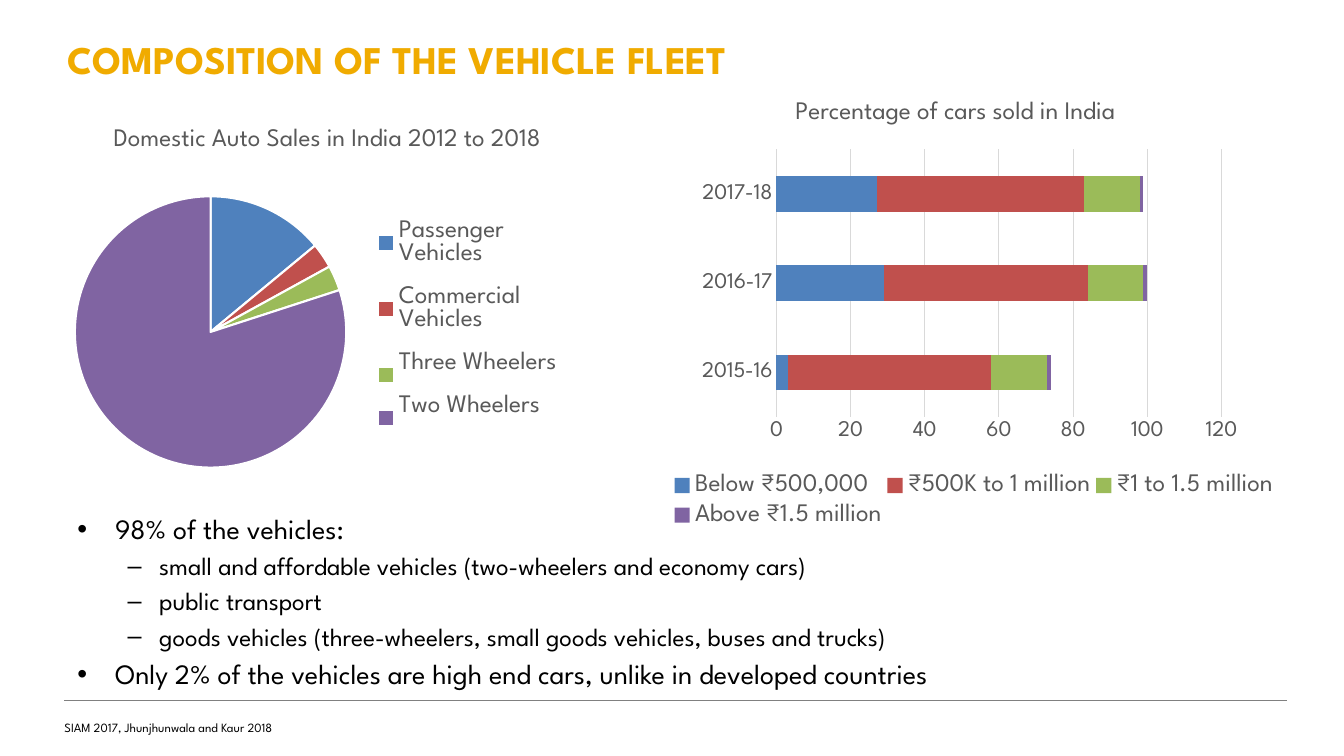
from dataclasses import dataclass

from lxml import etree
from pptx import Presentation
from pptx.chart.data import CategoryChartData
from pptx.dml.color import RGBColor
from pptx.enum.chart import XL_CHART_TYPE, XL_LEGEND_POSITION, XL_TICK_MARK
from pptx.enum.shapes import MSO_CONNECTOR
from pptx.enum.text import MSO_ANCHOR, MSO_AUTO_SIZE, PP_ALIGN
from pptx.oxml.ns import qn
from pptx.util import Pt

PIE, STACKED_BARS = XL_CHART_TYPE.PIE, XL_CHART_TYPE.BAR_STACKED
LEGEND_RIGHT, LEGEND_BOTTOM = XL_LEGEND_POSITION.RIGHT, XL_LEGEND_POSITION.BOTTOM
NO_TICKS = XL_TICK_MARK.NONE
TOP, MIDDLE = MSO_ANCHOR.TOP, MSO_ANCHOR.MIDDLE


@dataclass(frozen=True)
class Theme:
    font: str = "League Spartan"
    accent: RGBColor = RGBColor(0xF0, 0xAB, 0x00)
    text: RGBColor = RGBColor(0, 0, 0)
    chart_text: RGBColor = RGBColor(0x59, 0x59, 0x59)
    grid: RGBColor = RGBColor(0xD9, 0xD9, 0xD9)
    rule: RGBColor = RGBColor(0x80, 0x80, 0x80)
    white: RGBColor = RGBColor(0xFF, 0xFF, 0xFF)
    series: tuple = tuple(map(RGBColor.from_string, ("4F81BD", "C0504D", "9BBB59", "8064A2")))
    title_size: int = 28
    bullet_sizes: tuple = (20, 18)
    chart_size: int = 18
    axis_size: int = 16
    source_size: int = 9


THEME = Theme()

TITLE = "COMPOSITION OF THE VEHICLE FLEET"
SOURCE = "SIAM 2017, Jhunjhunwala and Kaur 2018"
BULLETS = [
    (0, "98% of the vehicles:"),
    (1, "small and affordable vehicles (two-wheelers and economy cars)"),
    (1, "public transport"),
    (1, "goods vehicles (three-wheelers, small goods vehicles, buses and trucks)"),
    (0, "Only 2% of the vehicles are high end cars, unlike in developed countries"),
]

# Boxes are left, top, width, height in points; layouts are fractions of the chart.
SALES = {
    "type": PIE,
    "title": "Domestic Auto Sales in India 2012 to 2018",
    "categories": ["Passenger Vehicles", "Commercial Vehicles", "Three Wheelers", "Two Wheelers"],
    "series": [("Series 1", (14, 3, 3, 80))],
    "box": (10, 75.6, 453, 269.3),
    "legend": LEGEND_RIGHT,
    "title_layout": (0.15, 0.04),
    "plot_layout": (0.09, 0.24, 0.44, 0.72),
    "legend_layout": (0.57, 0.25, 0.29, 0.63),
}
PRICES = {
    "type": STACKED_BARS,
    "title": "Percentage of cars sold in India",
    "categories": ["2015-16", "2016-17", "2017-18"],
    "series": [
        ("Below ₹500,000", (3, 29, 27)),
        ("₹500K to 1 million", (55, 55, 56)),
        ("₹1 to 1.5 million", (15, 15, 15)),
        ("Above ₹1.5 million", (1, 1, 1)),
    ],
    "box": (447, 52.6, 512.6, 360.7),
    "legend": LEGEND_BOTTOM,
    "title_layout": (0.23, 0.04),
    "plot_layout": (0.21, 0.15, 0.62, 0.53),
    "legend_layout": (0.06, 0.78, 0.85, 0.13),
}


def place(shape, box):
    shape.left, shape.top, shape.width, shape.height = map(Pt, box)


def style_font(font, size, color, bold=False):
    font.name, font.size, font.bold = THEME.font, Pt(size), bold
    font.color.rgb = color


def prepare_frame(placeholder, box, anchor, left_inset=0):
    place(placeholder, box)
    frame = placeholder.text_frame
    frame.word_wrap, frame.auto_size = True, MSO_AUTO_SIZE.NONE
    frame.vertical_anchor, frame.margin_left = anchor, Pt(left_inset)
    return frame


def set_layout(parent, index, fractions, inner=False):
    """Fix a chart part at x, y and, if given, width, height."""
    for old in parent.findall(qn("c:layout")):
        parent.remove(old)
    layout = etree.Element(qn("c:layout"))
    manual = etree.SubElement(layout, qn("c:manualLayout"))
    settings = [("layoutTarget", "inner")] if inner else []
    settings += [("xMode", "edge"), ("yMode", "edge")]
    settings += zip("xywh", fractions)
    for name, value in settings:
        etree.SubElement(manual, qn(f"c:{name}")).set("val", str(value))
    parent.insert(index, layout)


def add_styled_chart(slide, content):
    data = CategoryChartData()
    data.categories = content["categories"]
    for name, values in content["series"]:
        data.add_series(name, values)
    chart = slide.shapes.add_chart(content["type"], *map(Pt, content["box"]), data).chart
    style_font(chart.font, THEME.axis_size, THEME.chart_text)

    chart.has_title = True
    title_frame = chart.chart_title.text_frame
    title_frame.text = content["title"]
    style_font(title_frame.paragraphs[0].runs[0].font, THEME.chart_size, THEME.chart_text)

    chart.has_legend = True
    chart.legend.position = content["legend"]
    chart.legend.include_in_layout = False
    style_font(chart.legend.font, THEME.chart_size, THEME.chart_text)

    root = chart.element.find(qn("c:chart"))
    set_layout(root.find(qn("c:title")), 1, content["title_layout"])
    set_layout(root.find(qn("c:legend")), 1, content["legend_layout"])
    set_layout(root.find(qn("c:plotArea")), 0, content["plot_layout"], inner=True)
    return chart


def add_sales_pie(slide):
    plot = add_styled_chart(slide, SALES).plots[0]
    plot.vary_by_categories = True
    for index, color in enumerate(THEME.series):
        slice_format = plot.series[0].points[index].format
        slice_format.fill.solid()
        slice_format.fill.fore_color.rgb = color
        slice_format.line.color.rgb = THEME.white
        slice_format.line.width = Pt(1.5)


def add_price_bars(slide):
    chart = add_styled_chart(slide, PRICES)
    plot = chart.plots[0]
    plot.vary_by_categories = False
    plot.gap_width, plot.overlap = 150, 100
    for series, color in zip(plot.series, THEME.series):
        series.format.fill.solid()
        series.format.fill.fore_color.rgb = color

    years, percent = chart.category_axis, chart.value_axis
    for axis in (years, percent):
        axis.major_tick_mark = axis.minor_tick_mark = NO_TICKS
        style_font(axis.tick_labels.font, THEME.axis_size, THEME.chart_text)
    percent.minimum_scale, percent.maximum_scale, percent.major_unit = 0, 120, 20
    percent.has_major_gridlines = True
    percent.format.line.fill.background()
    for line in (years.format.line, percent.major_gridlines.format.line):
        line.color.rgb, line.width = THEME.grid, Pt(0.75)


def add_footer_rule(slide):
    rule = slide.shapes.add_connector(MSO_CONNECTOR.STRAIGHT, Pt(46), Pt(500), Pt(919.5), Pt(500))
    rule.line.color.rgb, rule.line.width = THEME.rule, Pt(0.25)
    etree.SubElement(rule.element.spPr, qn("a:effectLst"))


def fill_text(slide):
    title, bullets, source = slide.placeholders

    frame = prepare_frame(title, (48, 21.6, 864, 62.6), TOP)
    frame.text = TITLE
    frame.paragraphs[0].alignment = PP_ALIGN.LEFT
    style_font(frame.paragraphs[0].runs[0].font, THEME.title_size, THEME.accent, bold=True)

    frame = prepare_frame(bullets, (48, 362, 829.4, 139.7), TOP, left_inset=7.2)
    frame.text = "\n".join(text for _, text in BULLETS)
    for paragraph, (level, _) in zip(frame.paragraphs, BULLETS):
        paragraph.level = level
        style_font(paragraph.runs[0].font, THEME.bullet_sizes[level], THEME.text)
    frame.paragraphs[0].space_before = Pt(0)

    frame = prepare_frame(source, (46, 504.7, 481, 30.2), MIDDLE)
    frame.text = SOURCE
    paragraph = frame.paragraphs[0]
    properties = paragraph._p.get_or_add_pPr()
    properties.set("marL", "0")
    properties.set("indent", "0")
    etree.SubElement(properties, qn("a:buNone"))
    paragraph.space_before = Pt(0)
    style_font(paragraph.runs[0].font, THEME.source_size, THEME.text)


def main():
    presentation = Presentation()
    presentation.slide_width, presentation.slide_height = Pt(960), Pt(540)
    two_content_layout = presentation.slide_layouts[3]
    slide = presentation.slides.add_slide(two_content_layout)
    add_footer_rule(slide)
    fill_text(slide)
    add_sales_pie(slide)
    add_price_bars(slide)
    presentation.save("out.pptx")


if __name__ == "__main__":
    main()
